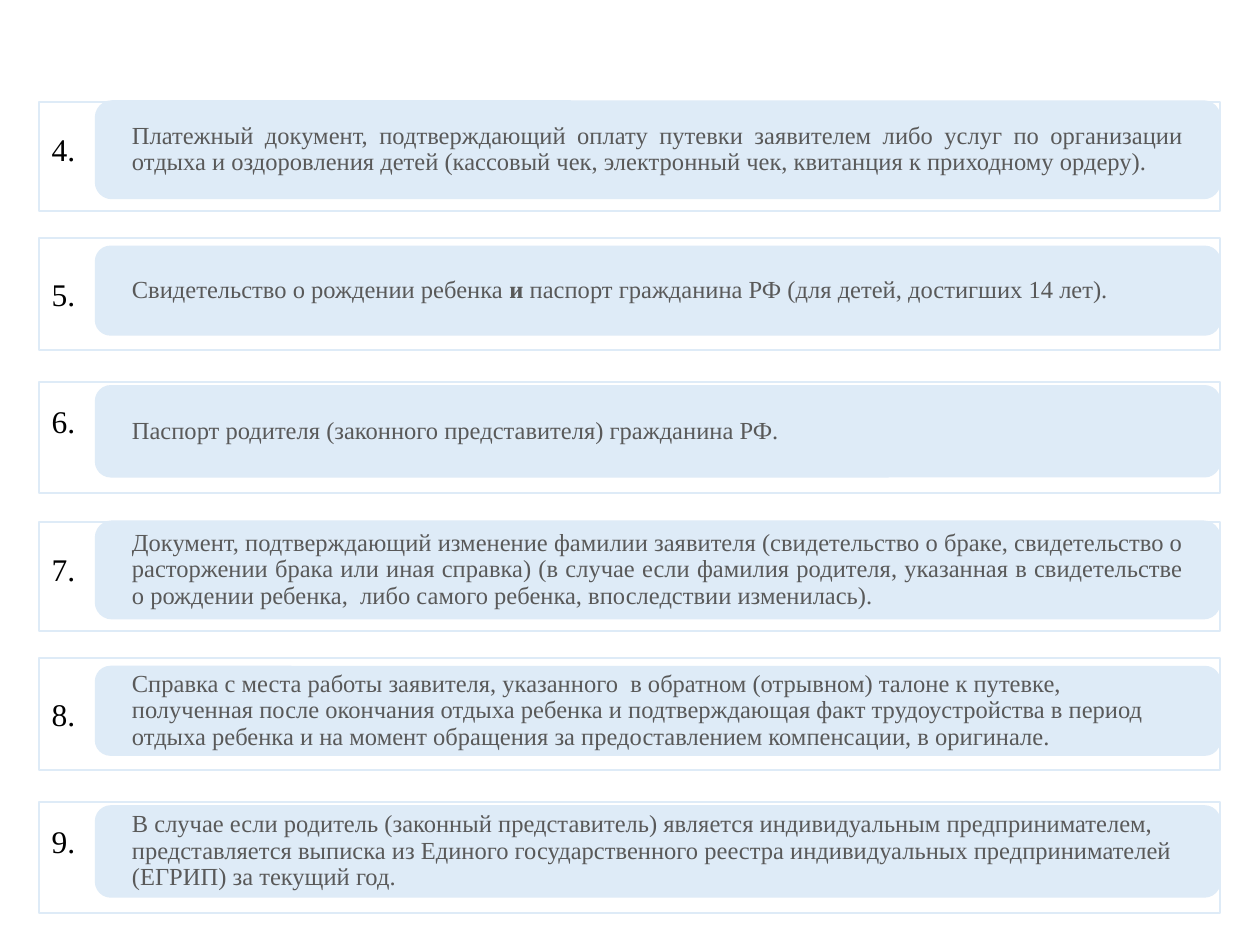
"""Build a slide listing numbered documents 4 to 9 in framed rows."""
from dataclasses import dataclass

from lxml.etree import SubElement
from pptx import Presentation
from pptx.dml.color import RGBColor
from pptx.enum.shapes import MSO_SHAPE as Shape
from pptx.enum.text import MSO_ANCHOR as Anchor, MSO_AUTO_SIZE as AutoSize, PP_ALIGN as Align
from pptx.oxml.ns import qn
from pptx.util import Cm, Pt

COLORS = {"frame": "FFFFFF", "bar": "DEEBF7", "text": "595959", "number": "000000"}
FONT = "Times New Roman"
FRAME_LEFT, FRAME_WIDTH = 0.79, 23.8
BAR_LEFT, BAR_WIDTH, BAR_PADDING = 1.93, 22.66, 0.09
NUMBER_WIDTH, NUMBER_HEIGHT = 0.98, 1.03
GROUP_PITCH = 8.47
FIRST_NUMBER = 4


@dataclass
class Row:
    frame_top: float
    frame_height: float
    bar_top: float
    bar_height: float
    number_top: float
    align: Align


ROWS = [
    Row(2.06, 2.19, 2.04, 1.96, 2.49, Align.JUSTIFY),
    Row(4.8, 2.26, 4.97, 1.78, 5.41, Align.LEFT),
    Row(7.7, 2.24, 7.78, 1.83, 7.98, Align.LEFT),
]

GROUPS = [
    [
        [("Платежный документ, подтверждающий оплату путевки заявителем либо услуг по "
          "организации отдыха и оздоровления детей (кассовый чек, электронный чек, "
          "квитанция к приходному ордеру).", False)],
        [("Свидетельство о рождении ребенка ", False), ("и", True),
         (" паспорт гражданина РФ (для детей, достигших 14 лет).", False)],
        [("Паспорт родителя (законного представителя) гражданина РФ.", False)],
    ],
    [
        [("Документ, подтверждающий изменение фамилии заявителя (свидетельство о браке, "
          "свидетельство о расторжении брака или иная справка) (в случае если фамилия "
          "родителя, указанная в свидетельстве о рождении ребенка,  либо самого ребенка, "
          "впоследствии изменилась).", False)],
        [("Справка с места работы заявителя, указанного  в обратном (отрывном) талоне к "
          "путевке, полученная после окончания отдыха ребенка и подтверждающая факт "
          "трудоустройства в период отдыха ребенка и на момент обращения за "
          "предоставлением компенсации, в оригинале.", False)],
        [("В случае если родитель (законный представитель) является индивидуальным "
          "предпринимателем, представляется выписка из Единого государственного реестра "
          "индивидуальных предпринимателей (ЕГРИП) за текущий год.", False)],
    ],
]


def color(name):
    return RGBColor.from_string(COLORS[name])


def add_box(shapes, kind, left, top, width, height, fill):
    shape = shapes.add_shape(kind, Cm(left), Cm(top), Cm(width), Cm(height))
    shape.shadow.inherit = False
    shape.fill.solid()
    shape.fill.fore_color.rgb = color(fill)
    shape.line.color.rgb = color("bar")
    shape.line.width = Pt(1)
    return shape


def set_opacity(shape, percent):
    fill_color = shape.fill._xPr.find(qn("a:solidFill"))[0]
    SubElement(fill_color, qn("a:alpha")).set("val", str(percent * 1000))


def add_run(paragraph, text, size, fill, bold=False):
    run = paragraph.add_run()
    run.text = text
    run.font.name = FONT
    run.font.size = Pt(size)
    run.font.bold = bold
    run.font.color.rgb = color(fill)


def add_description(shapes, row, top, runs):
    box = shapes.add_textbox(Cm(BAR_LEFT + BAR_PADDING), Cm(top + BAR_PADDING),
                             Cm(BAR_WIDTH - 2 * BAR_PADDING),
                             Cm(row.bar_height - 2 * BAR_PADDING))
    frame = box.text_frame
    frame.word_wrap = True
    frame.vertical_anchor = Anchor.MIDDLE
    frame.margin_left = frame.margin_right = Cm(0.64)
    frame.margin_top = frame.margin_bottom = 0
    paragraph = frame.paragraphs[0]
    paragraph.alignment = row.align
    paragraph.line_spacing = 0.9
    for text, bold in runs:
        add_run(paragraph, text, 14, "text", bold)


def add_row(shapes, row, offset, runs):
    frame = add_box(shapes, Shape.RECTANGLE, FRAME_LEFT, row.frame_top + offset,
                    FRAME_WIDTH, row.frame_height, "frame")
    set_opacity(frame, 90)
    bar_top = row.bar_top + offset
    add_box(shapes, Shape.ROUNDED_RECTANGLE, BAR_LEFT, bar_top,
            BAR_WIDTH, row.bar_height, "bar")
    add_description(shapes, row, bar_top, runs)


def add_number(shapes, number, top):
    box = shapes.add_textbox(Cm(FRAME_LEFT), Cm(top), Cm(NUMBER_WIDTH), Cm(NUMBER_HEIGHT))
    box.text_frame.word_wrap = False
    box.text_frame.auto_size = AutoSize.SHAPE_TO_FIT_TEXT
    add_run(box.text_frame.paragraphs[0], f"{number}.", 18, "number")


def main():
    presentation = Presentation()
    presentation.slide_width, presentation.slide_height = Cm(25.4), Cm(19.05)
    slide = presentation.slides.add_slide(presentation.slide_layouts[6])
    for index, descriptions in enumerate(GROUPS):
        offset = index * GROUP_PITCH
        group = slide.shapes.add_group_shape()
        for row, runs in zip(ROWS, descriptions):
            add_row(group.shapes, row, offset, runs)
        first = FIRST_NUMBER + index * len(ROWS)
        for number, row in enumerate(ROWS, first):
            add_number(slide.shapes, number, row.number_top + offset)
    presentation.save("out.pptx")


if __name__ == "__main__":
    main()
